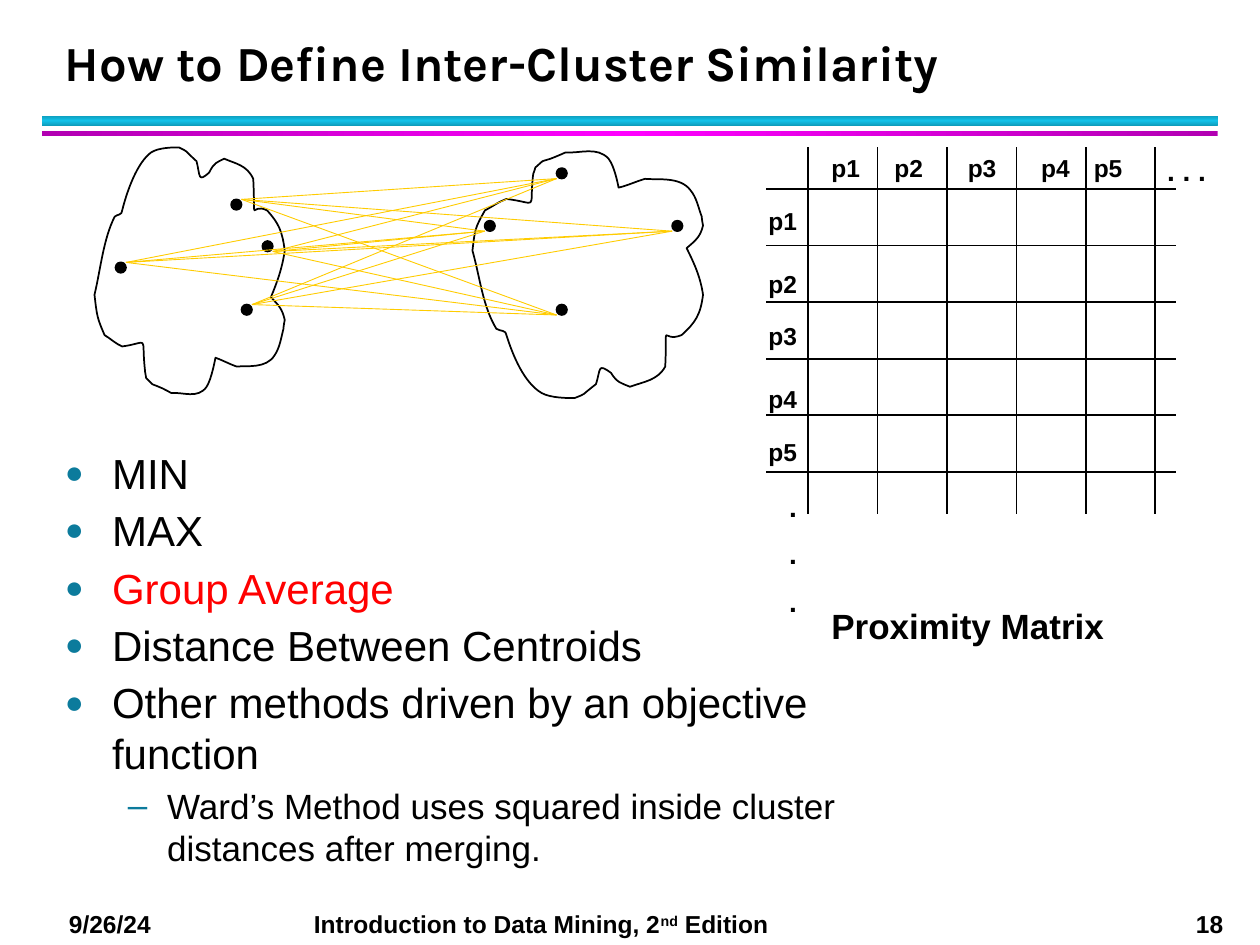
"""Build a slide on inter-cluster similarity with two clusters, a proximity matrix and a list."""
from copy import deepcopy
from dataclasses import dataclass
from itertools import product

from lxml.etree import SubElement as Sub
from pptx import Presentation
from pptx.dml.color import RGBColor as RGB
from pptx.enum.shapes import MSO_CONNECTOR as Link, MSO_SHAPE as Shape
from pptx.enum.text import MSO_ANCHOR as Anchor, PP_ALIGN as Align
from pptx.oxml.ns import qn
from pptx.util import Cm, Pt


@dataclass(frozen=True)
class Theme:
    black: RGB = RGB(0, 0, 0)
    red: RGB = RGB(255, 0, 0)
    gold: RGB = RGB(0xFF, 0xCC, 0)
    teal: str = "0C7B9C"
    cyan: tuple = ("0E9BBA", "12C2E9", "0E9BBA")
    pink: tuple = ("B200B2", "FF00FF", "B200B2")
    head: str = "Karla"
    face: str = "Arial"
    title: int = 28
    body: int = 24
    sub: int = 20
    mark: int = 16
    label: int = 14


look = Theme()
deck = Presentation()
deck.slide_width, deck.slide_height = Cm(25.4), Cm(19.05)
slide = deck.slides.add_slide(deck.slide_layouts[6])
shapes = slide.shapes


def write(left, top, width, height, lines, size, bold=True, name=look.face, **form):
    frame = shapes.add_textbox(Cm(left), Cm(top), Cm(width), Cm(height)).text_frame
    frame.word_wrap = True
    for num, words in enumerate(lines):
        para = frame.add_paragraph() if num else frame.paragraphs[0]
        for key, value in form.items():
            setattr(para, key, value)
        for word in words if isinstance(words, tuple) else (words,):
            run = para.add_run()
            run.text = word
            for key, value in dict(size=Pt(size), bold=bold, name=name).items():
                setattr(run.font, key, value)
            run.font.color.rgb = look.black
    return frame


def draw(start, end, color, width):
    wire = shapes.add_connector(Link.STRAIGHT, *map(Cm, start + end))
    wire.line.color.rgb = color
    wire.line.width = Pt(width)
    Sub(wire.element.spPr, qn("a:effectLst"))


for top, height, tones, angle in [(2.33, 0.21, look.cyan, 90), (2.65, 0.1, look.pink, 0)]:
    bar = shapes.add_shape(Shape.RECTANGLE, Cm(0.85), Cm(top), Cm(23.7), Cm(height))
    bar.shadow.inherit = False
    bar.line.fill.background()
    bar.fill.gradient()
    bar.fill.gradient_angle = angle
    stops = next(bar.element.iter(qn("a:gsLst")))
    stops.append(deepcopy(stops[0]))
    for num, (stop, tone) in enumerate(zip(bar.fill.gradient_stops, tones)):
        stop.position = num / 2
        stop.color.rgb = RGB.from_string(tone)

title = write(1.06, 0.45, 23.01, 1.52, ["How to Define Inter-Cluster Similarity"],
              look.title, name=look.head, line_spacing=Pt(36))
title.vertical_anchor = Anchor.BOTTOM

grid_left, grid_top, grid_right, grid_foot = 15.45, 2.97, 23.71, 10.37
for num in range(6):
    col, row = 16.29 + 1.4 * num, 3.81 + 1.14 * num
    draw((col, grid_top), (col, grid_foot), look.black, 1)
    draw((grid_left, row), (grid_right, row), look.black, 1)

label_cols = [16.51, 17.78, 19.26, 20.74, 21.8]
label_rows = [4.02, 5.29, 6.35, 7.62, 8.68]
for num, (col, row) in enumerate(zip(label_cols, label_rows), 1):
    for left, top in [(col, grid_top), (15.24, row)]:
        write(left, top, 1.48, 0.85, [f"p{num}"], look.label)
write(23.28, grid_top, 1.48, 0.93, [". . ."], look.mark)
write(15.66, 9.74, 1.48, 2.96, ["."] * 3, look.mark, space_before=Pt(8))
write(16.51, 12.06, 6.99, 1.09, ["Proximity Matrix"], look.sub)

unit = Cm(0.0254)
rim_start = (91, 172)
rim_curves = [
    ((82, 190), (80, 213), (75, 234)), ((77, 251), (77, 252), (83, 266)),
    ((88, 269), (92, 273), (97, 275)), ((119, 272), (112, 265), (115, 293)),
    ((115, 296), (116, 298), (116, 300)), ((123, 307), (119, 304), (126, 307)),
    ((129, 308), (136, 312), (136, 312)), ((145, 311), (157, 317), (164, 307)),
    ((168, 301), (171, 284), (171, 284)), ((177, 286), (182, 289), (188, 291)),
    ((196, 290), (211, 293), (218, 282)), ((222, 276), (223, 269), (225, 261)),
    ((225, 259), (226, 254), (226, 254)), ((224, 245), (221, 242), (215, 236)),
    ((220, 224), (224, 213), (226, 199)), ((224, 183), (221, 177), (212, 167)),
    ((198, 160), (203, 182), (201, 142)), ((196, 131), (187, 130), (178, 126)),
    ((172, 129), (170, 129), (166, 137)), ((157, 145), (159, 140), (156, 128)),
    ((145, 118), (150, 121), (142, 117)), ((138, 117), (126, 117), (120, 121)),
    ((109, 129), (101, 151), (97, 167)), ((97, 171), (93, 170), rim_start)]
rim = [rim_start] + [knot for curve in rim_curves for knot in curve]
rim_left, rim_width, east_left, east_width, flip_sum = 75, 151, 375, 183, 433
stretch = east_width / rim_width
mirror = [(east_left + (x - rim_left) * stretch, flip_sum - y) for x, y in rim]
for knots in (rim, mirror):
    pen = shapes.build_freeform(*knots[0], scale=unit)
    pen.add_line_segments(knots[1:], close=False)
    cloud = pen.convert_to_shape()
    cloud.shadow.inherit = False
    cloud.fill.background()
    cloud.line.color.rgb = look.black
    cloud.line.width = Pt(1)
    trace = next(cloud.element.iter(qn("a:path")))
    steps = list(trace)[1:]
    for num in range(0, len(steps), 3):
        curve = Sub(trace, qn("a:cubicBezTo"))
        for step in steps[num:num + 3]:
            curve.append(step[0])
            trace.remove(step)
    Sub(trace, qn("a:close"))

size = 0.21
west_dots = [(4.87, 6.14), (5.29, 4.86), (2.33, 5.29), (4.66, 4.02)]
east_dots = [(11.22, 6.14), (9.77, 4.45), (11.22, 3.39), (13.55, 4.45)]
for left, top in west_dots + east_dots:
    dot = shapes.add_shape(Shape.OVAL, Cm(left), Cm(top), Cm(size), Cm(size))
    dot.shadow.inherit = False
    dot.fill.solid()
    dot.fill.fore_color.rgb = dot.line.color.rgb = look.black
    dot.line.width = Pt(1)
drops = [0, size, 0, 0]
starts = [(left + size, top + drop) for (left, top), drop in zip(west_dots, drops)]
ends = [(left, top + size) for left, top in east_dots]
for start, end in product(starts, ends):
    draw(start, end, look.gold, 0.5)

points = ["MIN", "MAX", "Group Average", "Distance Between Centroids",
          "Other methods driven by an objective function",
          "Ward’s Method uses squared inside cluster distances after merging."]
body = write(1.06, 8.89, 16.09, 8.69, points, look.body, bold=False,
             space_before=Pt(2), space_after=Pt(2))
body.paragraphs[2].runs[0].font.color.rgb = look.red
last = body.paragraphs[-1]
last.level = 1
last.runs[0].font.size = Pt(look.sub)
bullets = [(0.95, 0.95, "●", 75), (2.06, 0.79, "–", 100)]
for para in body.paragraphs:
    margin, hang, sign, scale = bullets[para.level]
    props = para._p.get_or_add_pPr()
    for key, value in dict(marL=Cm(margin), indent=-Cm(hang)).items():
        props.set(key, str(int(value)))
    Sub(Sub(props, qn("a:buClr")), qn("a:srgbClr"), val=look.teal)
    Sub(props, qn("a:buSzPct"), val=str(scale * 1000))
    Sub(props, qn("a:buFont"), typeface=look.face)
    Sub(props, qn("a:buChar"), char=sign)

edition = ("Introduction to Data Mining, 2", "nd", " Edition")
for left, width, words, side in [(1.14, 3, "9/26/24", Align.LEFT),
                                 (6.08, 12, edition, Align.LEFT),
                                 (22.91, 2, "18", Align.RIGHT)]:
    foot = write(left, 18.21, width, 0.86, [words], look.label, alignment=side)
    for run in foot.paragraphs[0].runs[1:2]:
        run.font._element.set("baseline", "30000")

deck.save("out.pptx")
